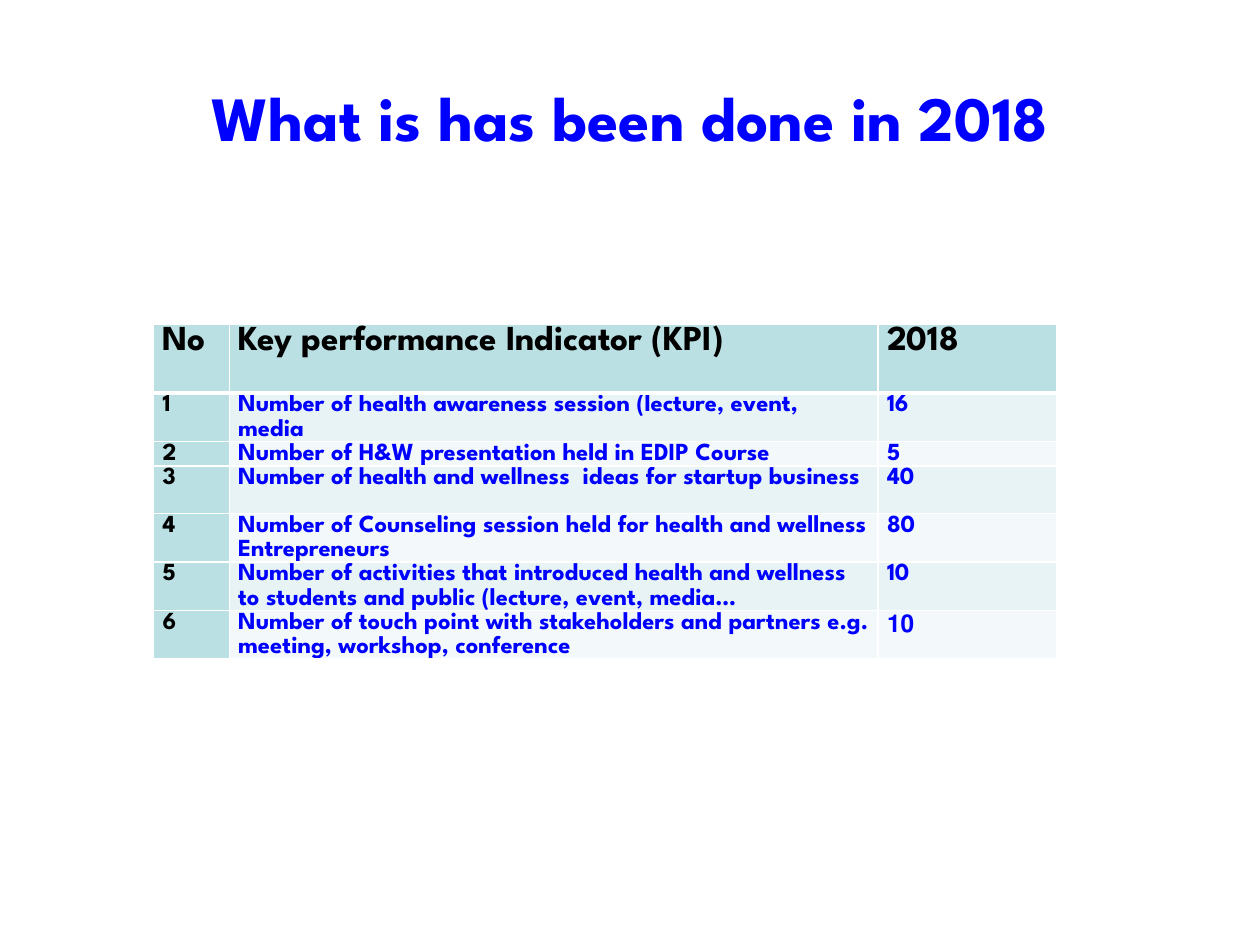
"""Build a slide with a table of the health and wellness indicators for 2018."""
from lxml import etree
from pptx import Presentation, util as u
from pptx.dml.color import RGBColor
from pptx.enum import text
from pptx.oxml.ns import qn

TITLE = "What is has been done in 2018"
HEADER = ("No", "Key performance Indicator (KPI)", "2018")
INDICATORS = [
    ("Number of health awareness session (lecture, event, media", "16"),
    ("Number of H&W presentation held in EDIP Course", "5"),
    ("Number of health and wellness  ideas for startup business", "40"),
    ("Number of Counseling session held for health and wellness Entrepreneurs", "80"),
    ("Number of activities that introduced health and wellness to students "
     "and public (lecture, event, media…", "10"),
    ("Number of touch point with stakeholders and partners e.g. meeting, "
     "workshop, conference", "10"),
]
ROWS = [HEADER] + [(str(number), *row) for number, row in enumerate(INDICATORS, 1)]

FONT = "League Spartan"
BLACK = RGBColor(0x00, 0x00, 0x00)
BLUE = RGBColor(0x00, 0x00, 0xFF)
WHITE = RGBColor(0xFF, 0xFF, 0xFF)
TEAL = RGBColor(0xBB, 0xE0, 0xE3)
BANDS = (RGBColor(0xF3, 0xF9, 0xFA), RGBColor(0xE7, 0xF3, 0xF4))

COLUMN_WIDTHS = (0.6, 5.15, 1.42)
HEADER_HEIGHT, LINE_HEIGHT = 0.55, 0.19
LINES = (2, 1, 2, 2, 2, 2)
ROW_HEIGHTS = [HEADER_HEIGHT] + [LINE_HEIGHT * count for count in LINES]


def add_run(paragraph, words, size, color):
    run = paragraph.add_run()
    run.text = words
    run.font.name, run.font.size, run.font.bold = FONT, u.Pt(size), True
    run.font.color.rgb = color


def set_borders(cell, bottom_width):
    properties = cell._tc.get_or_add_tcPr()
    widths = {"lnL": 1, "lnR": 1, "lnT": 1, "lnB": bottom_width}
    for index, (side, width) in enumerate(widths.items()):
        line = etree.Element(qn(f"a:{side}"), w=str(u.Pt(width)))
        fill = etree.SubElement(line, qn("a:solidFill"))
        etree.SubElement(fill, qn("a:srgbClr"), val=str(WHITE))
        properties.insert(index, line)


def fill_cell(cell, words, row, column):
    is_header = row == 0
    cell.margin_left = cell.margin_right = u.Inches(0.07)
    cell.margin_top = cell.margin_bottom = 0
    cell.fill.solid()
    cell.fill.fore_color.rgb = TEAL if is_header or column == 0 else BANDS[row % 2]
    set_borders(cell, 3 if is_header else 1)
    paragraph = cell.text_frame.paragraphs[0]
    paragraph.line_spacing = 1.07
    paragraph.alignment = text.PP_ALIGN.LEFT
    if (row, column) == (len(ROWS) - 1, len(HEADER) - 1):
        paragraph._p.get_or_add_pPr().set("rtl", "1")
    add_run(paragraph, words, 20 if is_header else 14,
            BLACK if is_header or column == 0 else BLUE)


def add_title(slide):
    box = slide.shapes.add_textbox(u.Inches(0.5), u.Inches(0.3), u.Inches(9), u.Inches(1.25))
    frame = box.text_frame
    frame.word_wrap = True
    frame.vertical_anchor = text.MSO_ANCHOR.MIDDLE
    frame.paragraphs[0].alignment = text.PP_ALIGN.CENTER
    add_run(frame.paragraphs[0], TITLE, 36, BLUE)


def add_indicator_table(slide):
    table = slide.shapes.add_table(
        len(ROWS), len(HEADER), u.Inches(1.22), u.Inches(2.57),
        u.Inches(sum(COLUMN_WIDTHS)), u.Inches(sum(ROW_HEIGHTS))).table
    for column, width in zip(table.columns, COLUMN_WIDTHS):
        column.width = u.Inches(width)
    for row, height in zip(table.rows, ROW_HEIGHTS):
        row.height = u.Inches(height)
    for row, values in enumerate(ROWS):
        for column, words in enumerate(values):
            fill_cell(table.cell(row, column), words, row, column)


def main():
    presentation = Presentation()
    presentation.slide_width, presentation.slide_height = u.Inches(10), u.Inches(7.5)
    slide = presentation.slides.add_slide(presentation.slide_layouts[6])
    add_indicator_table(slide)
    add_title(slide)
    presentation.save("out.pptx")


if __name__ == "__main__":
    main()
